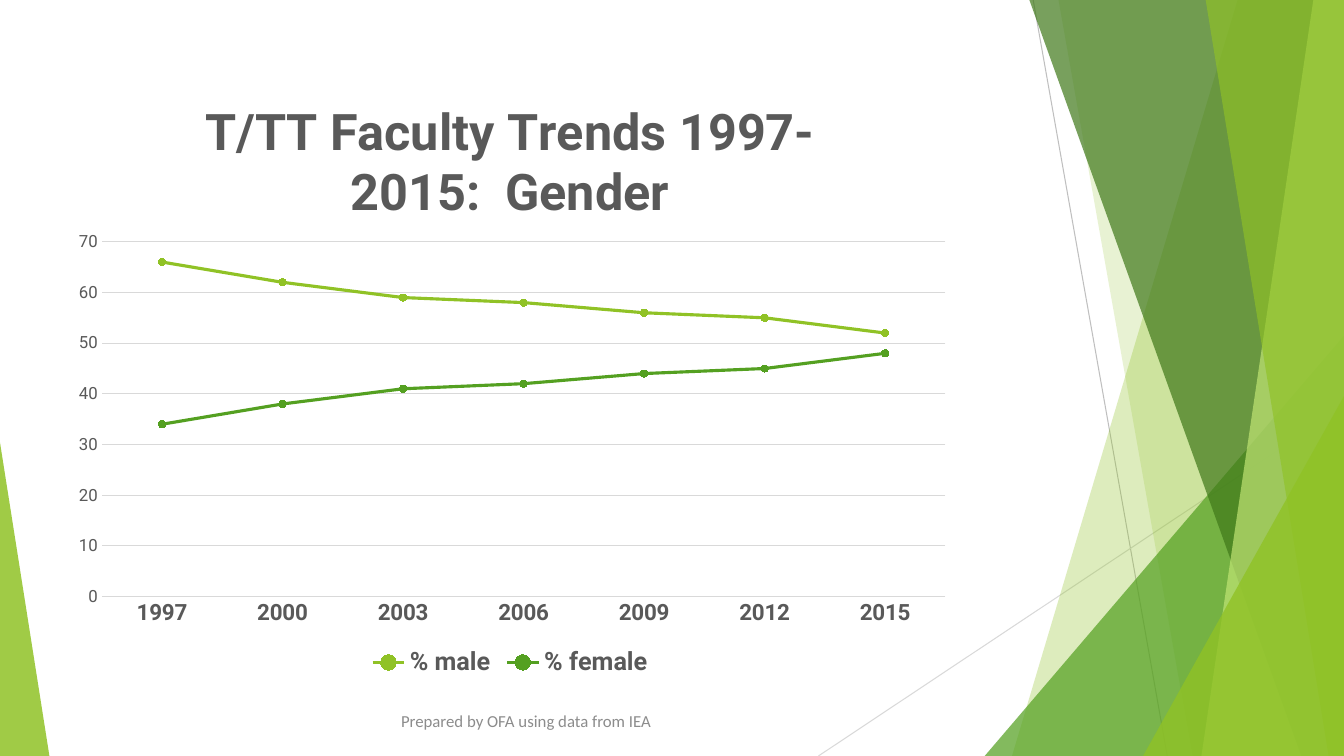
from dataclasses import dataclass

from lxml.etree import SubElement
from pptx import Presentation
from pptx.chart.data import CategoryChartData
from pptx.dml.color import RGBColor
from pptx.enum.chart import XL_CHART_TYPE, XL_LEGEND_POSITION, XL_MARKER_STYLE, XL_TICK_MARK
from pptx.enum.shapes import MSO_CONNECTOR, MSO_SHAPE
from pptx.enum.text import MSO_ANCHOR, PP_ALIGN
from pptx.oxml import parse_xml
from pptx.oxml.ns import nsdecls, qn
from pptx.util import Pt


@dataclass(frozen=True)
class Theme:
    lime: str = "90C226"
    green: str = "54A021"
    dark: str = "3F7819"
    pale: str = "C0E474"
    text: str = "595959"
    note: str = "8C8C8C"
    rule: str = "D9D9D9"
    edge: str = "BFBFBF"
    font: str = "Roboto"
    foot: str = "Calibri"
    head: int = 36
    key: int = 18
    years: int = 16
    small: int = 12


THEME = Theme()
WIDE, HIGH = 960, 540
YEARS = ["1997", "2000", "2003", "2006", "2009", "2012", "2015"]
TRENDS = [
    ("% male", [66, 62, 59, 58, 56, 55, 52], THEME.lime),
    ("% female", [34, 38, 41, 42, 44, 45, 48], THEME.green),
]


def rgb(color):
    return RGBColor.from_string(color)


def style(font, size, color, name=THEME.font, bold=False):
    font.size, font.name, font.bold = Pt(size), name, bold
    font.color.rgb = rgb(color)


def stroke(line, color, width=0.75):
    line.color.rgb = rgb(color)
    line.width = Pt(width)


def tint(shape, color, alpha):
    """Fill with a colour at alpha percent, without outline or shadow."""
    shape.shadow.inherit = False
    shape.line.fill.background()
    shape.fill.solid()
    shape.fill.fore_color.rgb = rgb(color)
    tone = shape.fill._xPr.find(".//" + qn("a:srgbClr"))
    SubElement(tone, qn("a:alpha"), val=str(alpha * 1000))


def add_line(slide, start, end, color):
    ends = [Pt(n) for n in (*start, *end)]
    line = slide.shapes.add_connector(MSO_CONNECTOR.STRAIGHT, *ends)
    stroke(line.line, color)
    SubElement(line._element.spPr, qn("a:effectLst"))


def add_panel(slide, top, base, color, alpha):
    """Fill from a slanted left edge to the right side of the slide."""
    pen = slide.shapes.build_freeform(Pt(top), Pt(-0.5), scale=1.0)
    corners = [(WIDE, -0.5), (WIDE, HIGH), (base, HIGH)]
    pen.add_line_segments([(Pt(x), Pt(y)) for x, y in corners], close=True)
    tint(pen.convert_to_shape(), color, alpha)


def add_wedge(slide, left, top, width, peak, color, alpha):
    """Stand a triangle on the bottom edge, its peak at 0 (left) to 1 (right)."""
    box = [Pt(n) for n in (left, top, width, HIGH - top)]
    wedge = slide.shapes.add_shape(MSO_SHAPE.ISOSCELES_TRIANGLE, *box)
    wedge.adjustments[0] = peak
    tint(wedge, color, alpha)


def add_decor(slide):
    add_line(slide, (738, 0), (833.8, HIGH), THEME.edge)
    add_line(slide, (WIDE, 290.2), (584.6, HIGH), THEME.rule)
    add_panel(slide, 884.2, 722.9, THEME.lime, 30)
    add_panel(slide, 756, 851.8, THEME.lime, 20)
    add_wedge(slide, 703.4, 239.8, 256.6, 1, THEME.green, 72)
    add_panel(slide, 735.1, 929.5, THEME.dark, 70)
    add_panel(slide, 938.2, 858.2, THEME.pale, 70)
    add_panel(slide, 861.1, 949, THEME.lime, 65)
    add_wedge(slide, 816.5, 283, 143.5, 1, THEME.lime, 80)
    add_wedge(slide, 0, 316.1, 35.3, 0, THEME.lime, 85)


def set_plot(chart, x, y, w, h):
    """Place the inner plot area by fractions of the chart."""
    area = chart._chartSpace.chart.plotArea
    old = area.find(qn("c:layout"))
    if old is not None:
        area.remove(old)
    area.insert(0, parse_xml(
        f'<c:layout {nsdecls("c")}><c:manualLayout><c:layoutTarget val="inner"/>'
        '<c:xMode val="edge"/><c:yMode val="edge"/>'
        f'<c:x val="{x}"/><c:y val="{y}"/><c:w val="{w}"/><c:h val="{h}"/>'
        '</c:manualLayout></c:layout>'))


def set_axes(chart):
    years, share = chart.category_axis, chart.value_axis
    for axis in (years, share):
        axis.major_tick_mark = axis.minor_tick_mark = XL_TICK_MARK.NONE
    style(years.tick_labels.font, THEME.years, THEME.text, bold=True)
    stroke(years.format.line, THEME.rule)
    style(share.tick_labels.font, THEME.small, THEME.text)
    share.format.line.fill.background()
    stroke(share.major_gridlines.format.line, THEME.rule)
    share.minimum_scale, share.maximum_scale, share.major_unit = 0, 70, 10


def set_trend(trend, color):
    trend.smooth = False
    stroke(trend.format.line, color, 2.25)
    mark = trend.marker
    mark.style, mark.size = XL_MARKER_STYLE.CIRCLE, 5
    mark.format.fill.solid()
    mark.format.fill.fore_color.rgb = rgb(color)
    stroke(mark.format.line, color)


def add_trends(slide, title):
    data = CategoryChartData()
    data.categories = YEARS
    for name, shares, _ in TRENDS:
        data.add_series(name, shares)
    box = [Pt(n) for n in (40.3, 50.4, 648, 437)]
    chart = slide.shapes.add_chart(XL_CHART_TYPE.LINE_MARKERS, *box, data).chart
    style(chart.font, THEME.small, THEME.text)
    chart.plots[0].vary_by_categories = False
    run = chart.chart_title.text_frame.paragraphs[0].add_run()
    run.text = title
    style(run.font, THEME.head, THEME.text, bold=True)
    chart.chart_title.include_in_layout = False
    chart.has_legend = True
    chart.legend.position = XL_LEGEND_POSITION.BOTTOM
    chart.legend.include_in_layout = False
    style(chart.legend.font, THEME.key, THEME.text, bold=True)
    set_axes(chart)
    set_plot(chart, 0.05, 0.28, 0.93, 0.58)
    for trend, (_, _, color) in zip(chart.plots[0].series, TRENDS):
        set_trend(trend, color)


def add_note(slide, text):
    box = [Pt(n) for n in (230.4, 500.4, 290.9, 28.8)]
    frame = slide.shapes.add_textbox(*box).text_frame
    frame.word_wrap = True
    frame.vertical_anchor = MSO_ANCHOR.MIDDLE
    line = frame.paragraphs[0]
    line.alignment = PP_ALIGN.CENTER
    run = line.add_run()
    run.text = text
    style(run.font, THEME.small, THEME.note, THEME.foot)


def main():
    deck = Presentation()
    deck.slide_width, deck.slide_height = Pt(WIDE), Pt(HIGH)
    slide = deck.slides.add_slide(deck.slide_layouts[6])
    add_decor(slide)
    add_trends(slide, "T/TT Faculty Trends 1997-2015:  Gender")
    add_note(slide, "Prepared by OFA using data from IEA")
    deck.save("out.pptx")


if __name__ == "__main__":
    main()
